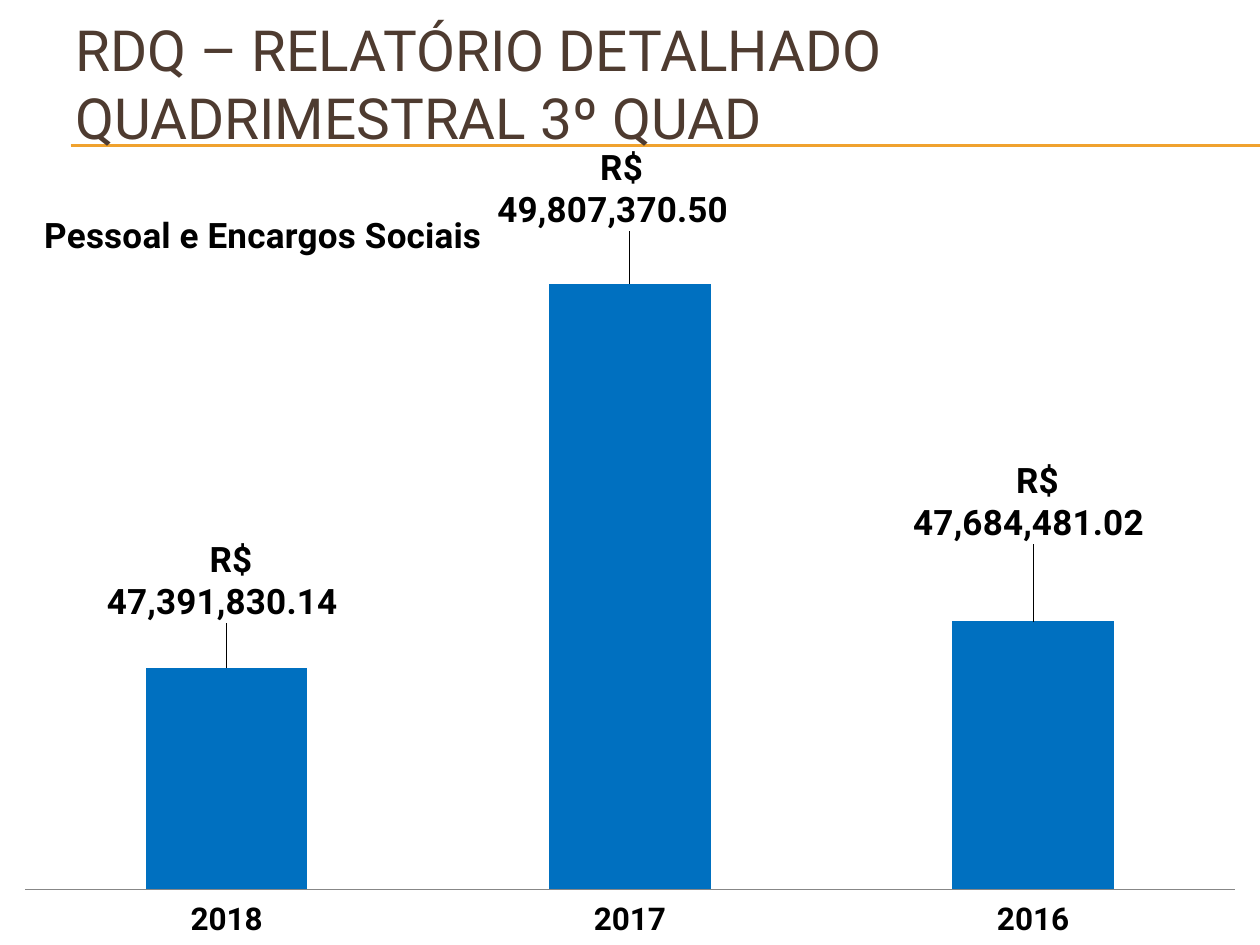
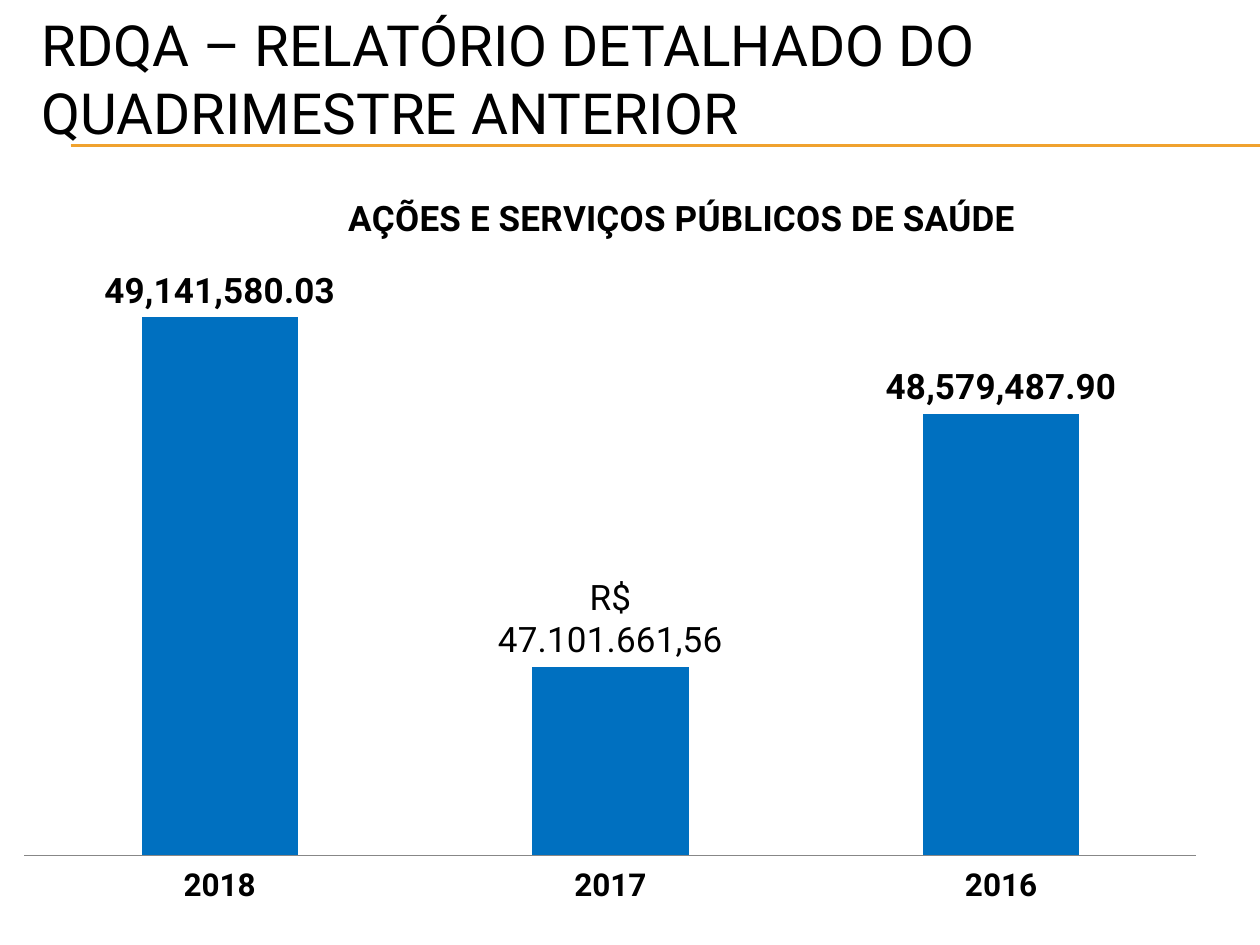
from lxml import etree
from pptx import Presentation
from pptx.chart.data import CategoryChartData
from pptx.dml.color import RGBColor
from pptx.enum.chart import XL_CHART_TYPE, XL_LABEL_POSITION, XL_TICK_LABEL_POSITION, XL_TICK_MARK
from pptx.enum.shapes import MSO_CONNECTOR
from pptx.enum.text import MSO_ANCHOR
from pptx.oxml.ns import qn
from pptx.util import Inches, Pt

BLACK = RGBColor(0x00, 0x00, 0x00)
BROWN = RGBColor(0x4E, 0x3B, 0x30)
GOLD = RGBColor(0xF0, 0xA2, 0x2E)
BLUE = RGBColor(0x00, 0x70, 0xC0)
GREY = RGBColor(0x87, 0x87, 0x87)
WHITE = RGBColor(0xFF, 0xFF, 0xFF)

FONT = "Roboto"
COLUMNS, ROWS = 100, 75
YEARS = ("2018", "2017", "2016")


def set_layout(parent, index, **shares):
    """Place a chart part by shares of the chart's size."""
    for old_layout in parent.findall(qn("c:layout")):
        parent.remove(old_layout)
    layout = etree.Element(qn("c:layout"))
    manual = etree.SubElement(layout, qn("c:manualLayout"))
    for name, value in shares.items():
        etree.SubElement(manual, qn(f"c:{name}")).set("val", str(value))
    parent.insert(index, layout)


class Deck:
    def __init__(self):
        self.presentation = Presentation()
        self.presentation.slide_width = Inches(10)
        self.presentation.slide_height = Inches(7.5)
        self.slide = None

    def place(self, column, row):
        return (int(self.presentation.slide_width * column / COLUMNS),
                int(self.presentation.slide_height * row / ROWS))

    def style(self, font, size, bold=False, color=BLACK):
        font.name = FONT
        font.size = Pt(size)
        font.bold = bold
        font.color.rgb = color

    def add_slide(self):
        self.slide = self.presentation.slides.add_slide(self.presentation.slide_layouts[6])
        fill = self.slide.background.fill
        fill.solid()
        fill.fore_color.rgb = WHITE
        # Double rule under the title
        for row in (11.5, 11.6):
            self.rule(5.6, COLUMNS, row)

    def rule(self, first_column, last_column, row):
        line = self.slide.shapes.add_connector(
            MSO_CONNECTOR.STRAIGHT, *self.place(first_column, row), *self.place(last_column, row))
        line.line.color.rgb = GOLD
        line.line.width = Pt(0.75)
        etree.SubElement(line._element.spPr, qn("a:effectLst"))

    def title(self, text, column, row, width, height, color):
        shape = self.slide.shapes.add_textbox(*self.place(column, row), *self.place(width, height))
        text_frame = shape.text_frame
        text_frame.word_wrap = True
        text_frame.vertical_anchor = MSO_ANCHOR.MIDDLE
        text_frame.text = text
        self.style(text_frame.paragraphs[0].runs[0].font, 32.4, color=color)

    def column_chart(self, name, values, box, maximum, number_format, title_at, plot_at, overlap=0):
        data = CategoryChartData()
        data.categories = YEARS
        data.add_series(name, values)
        column, row, width, height = box
        chart = self.slide.shapes.add_chart(
            XL_CHART_TYPE.COLUMN_CLUSTERED, *self.place(column, row),
            *self.place(width, height), data).chart
        chart.has_legend = False
        self.style(chart.font, 10)

        # Chart title
        text_frame = chart.chart_title.text_frame
        text_frame.text = name
        self.style(text_frame.paragraphs[0].runs[0].font, 20, bold=True)
        set_layout(chart.chart_title._element, 1, xMode="edge", yMode="edge",
                   x=title_at[0], y=title_at[1])

        # Plot area and axes
        set_layout(chart._chartSpace.chart.plotArea, 0, layoutTarget="inner",
                   xMode="edge", yMode="edge", x=0.02, y=plot_at[0], w=0.96, h=plot_at[1])
        value_axis = chart.value_axis
        value_axis.minimum_scale = 46_000_000
        value_axis.maximum_scale = maximum
        value_axis.has_major_gridlines = False
        value_axis.visible = False
        category_axis = chart.category_axis
        category_axis.major_tick_mark = XL_TICK_MARK.NONE
        category_axis.tick_label_position = XL_TICK_LABEL_POSITION.LOW
        category_axis.format.line.color.rgb = GREY
        category_axis.format.line.width = Pt(0.75)
        self.style(category_axis.tick_labels.font, 18, bold=True)

        # Columns and their labels
        plot = chart.plots[0]
        plot.vary_by_categories = False
        plot.gap_width = 150
        plot.overlap = overlap
        series = plot.series[0]
        series.format.fill.solid()
        series.format.fill.fore_color.rgb = BLUE
        labels = series.data_labels
        labels.show_value = True
        labels.number_format = number_format
        labels.number_format_is_linked = False
        labels.position = XL_LABEL_POSITION.OUTSIDE_END
        self.style(labels.font, 20, bold=True)
        return series

    def shift_labels(self, series, shifts):
        for index, (x, y) in enumerate(shifts):
            label = series.points[index].data_label
            self.style(label.font, 20, bold=True)
            label.position = XL_LABEL_POSITION.OUTSIDE_END
        for element, (x, y) in zip(series._element.iter(qn("c:dLbl")), shifts):
            set_layout(element, 1, x=x, y=y)

    def write_label(self, series, index, text):
        label = series.points[index].data_label
        label.text_frame.text = text
        label.position = XL_LABEL_POSITION.OUTSIDE_END
        self.style(label.text_frame.paragraphs[0].runs[0].font, 20)


def main():
    deck = Deck()

    # Staff costs
    deck.add_slide()
    deck.title("RDQ – RELATÓRIO DETALHADO QUADRIMESTRAL 3º QUAD", 5, 2.3, 90, 8.6, BROWN)
    staff = deck.column_chart(
        "Pessoal e Encargos Sociais", (47391830.14, 49807370.50, 47684481.02),
        box=(0, 11.7, 100, 63.3), maximum=50_000_000,
        number_format=r'_-"R$"\ * #,##0.00_-;\-"R$"\ * #,##0.00_-',
        title_at=(0.03, 0.07), plot_at=(0.13, 0.8))
    deck.shift_labels(staff, ((0, -0.05), (-0.01, -0.06), (0, -0.09)))

    # Public health spending
    deck.add_slide()
    deck.title("RDQA – RELATÓRIO DETALHADO DO QUADRIMESTRE ANTERIOR", 2.3, 1.6, 95, 9.2, BLACK)
    health = deck.column_chart(
        "AÇÕES E SERVIÇOS PÚBLICOS DE SAÚDE", (49141580.03, 47101661.56, 48579487.90),
        box=(0, 12.5, 96.9, 60.2), maximum=49_500_000, number_format="#,##0.00",
        title_at=(0.28, 0.04), plot_at=(0.13, 0.79), overlap=-25)
    deck.write_label(health, 1, "R$ 47.101.661,56")

    deck.presentation.save("out.pptx")


if __name__ == "__main__":
    main()
